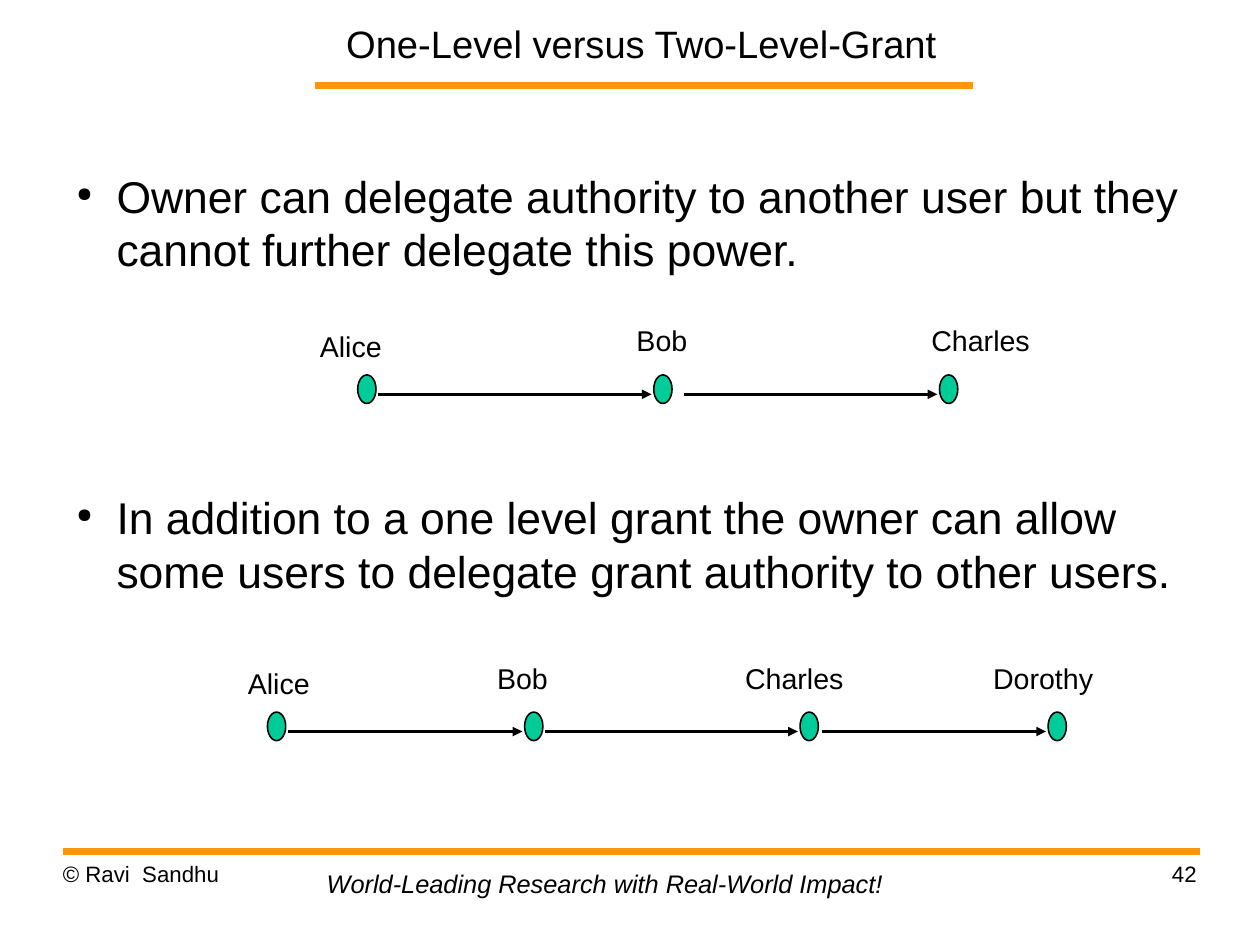
from dataclasses import dataclass

from lxml import etree
from pptx import Presentation
from pptx import util as u
from pptx.dml.color import RGBColor
from pptx.enum import shapes, text
from pptx.oxml.ns import qn


@dataclass(frozen=True)
class Theme:
    font: str = "Arial"
    ink: RGBColor = RGBColor(0, 0, 0)
    rule: RGBColor = RGBColor(0xFF, 0x95, 0x0E)
    node: RGBColor = RGBColor(0x00, 0xCC, 0x99)
    title: int = 24
    body: int = 28
    label: int = 18
    tagline: int = 16
    footer: int = 14


THEME = Theme()
LEFT, RIGHT = text.PP_ALIGN.LEFT, text.PP_ALIGN.RIGHT
NODE_WIDTH, NODE_HEIGHT = 0.16, 0.25

BULLETS = [
    "Owner can delegate authority to another user but they cannot further delegate this power.",
    "In addition to a one level grant the owner can allow some users to delegate grant authority to other users.",
]

# Each user: name, label left, label width, label drop, node left, start of the arrow leaving it
ONE_LEVEL = [
    ("Alice", 2.7, 0.92, 0.05, 3.13, 3.31),
    ("Bob", 5.47, 0.75, 0, 5.72, 5.98),
    ("Charles", 8.05, 1.22, 0, 8.22, None),
]
TWO_LEVEL = [
    ("Alice", 2.07, 0.92, 0.05, 2.34, 2.52),
    ("Bob", 4.25, 0.75, 0, 4.59, 4.77),
    ("Charles", 6.42, 1.22, 0, 7.0, 7.19),
    ("Dorothy", 8.59, 1.31, 0, 9.17, None),
]


def style(para, size, align=LEFT, italic=False):
    para.alignment = align
    font = para.font
    font.name, font.size, font.italic = THEME.font, u.Pt(size), italic
    font.color.rgb = THEME.ink


def set_margins(frame, side=0, end=0):
    frame.margin_left = frame.margin_right = u.Inches(side)
    frame.margin_top = frame.margin_bottom = u.Inches(end)
    frame.word_wrap = True


def add_title(slide, wording):
    title = slide.shapes.title
    title.left, title.top = u.Inches(2.77), u.Inches(0)
    title.width, title.height = u.Inches(5.68), u.Inches(0.75)
    frame = title.text_frame
    set_margins(frame)
    frame.vertical_anchor = text.MSO_ANCHOR.MIDDLE
    frame.text = wording
    style(frame.paragraphs[0], THEME.title, text.PP_ALIGN.CENTER)


def add_text(slide, wording, left, top, width, height, size, margins=(0, 0), **format):
    box = slide.shapes.add_textbox(*map(u.Inches, (left, top, width, height)))
    frame = box.text_frame
    set_margins(frame, *margins)
    frame.text = wording
    style(frame.paragraphs[0], size, **format)


def add_bullets(slide, items):
    box = slide.shapes.add_textbox(*map(u.Inches, (0.55, 1.48, 10.13, 5.91)))
    frame = box.text_frame
    set_margins(frame)
    frame.text = "\n".join(items)
    for index, para in enumerate(frame.paragraphs):
        if index:
            para.space_before = u.Pt(135)  # room for the chain above
        props = para._p.get_or_add_pPr()
        props.set("marL", str(u.Inches(0.47)))
        props.set("indent", str(u.Inches(-0.35)))
        etree.SubElement(props, qn("a:buSzPct"), val="45000")
        etree.SubElement(props, qn("a:buChar"), char="●")
        style(para, THEME.body)


def add_line(slide, start, end, y, color, weight, arrow=False):
    line = slide.shapes.add_connector(
        shapes.MSO_CONNECTOR.STRAIGHT, *map(u.Inches, (start, y, end, y)))
    line.line.color.rgb = color
    line.line.width = u.Pt(weight)
    if arrow:
        etree.SubElement(line.line._get_or_add_ln(), qn("a:tailEnd"), type="triangle")
    etree.SubElement(line._element.spPr, qn("a:effectLst"))


def add_node(slide, left, top):
    node = slide.shapes.add_shape(
        shapes.MSO_SHAPE.OVAL, *map(u.Inches, (left, top, NODE_WIDTH, NODE_HEIGHT)))
    node.shadow.inherit = False
    node.fill.solid()
    node.fill.fore_color.rgb = THEME.node
    node.line.color.rgb = THEME.ink
    node.line.width = u.Pt(1)


def add_chain(slide, users, top):
    for name, label_left, label_width, drop, node_left, _ in users:
        add_node(slide, node_left, top)
        add_text(slide, name, label_left, top - 0.5 + drop, label_width, 0.5,
                 THEME.label, margins=(0.1, 0.05))
    for (*_, start), (*_, next_left, _) in zip(users, users[1:]):
        add_line(slide, start, next_left - 0.02, top + 0.17, THEME.ink, 2, arrow=True)


def main():
    deck = Presentation()
    deck.slide_width, deck.slide_height = u.Cm(28), u.Cm(21)
    slide = deck.slides.add_slide(deck.slide_layouts[5])

    # Rules under the title and above the footer
    add_line(slide, 2.76, 8.51, 0.75, THEME.rule, 4.31)
    add_line(slide, 0.55, 10.5, 7.45, THEME.rule, 4.31)

    # Title and points
    add_title(slide, "One-Level versus Two-Level-Grant")
    add_bullets(slide, BULLETS)

    # Footer
    add_text(slide, "© Ravi  Sandhu", 0.55, 7.53, 2.57, 0.57, THEME.footer)
    add_text(slide, "42", 7.9, 7.53, 2.57, 0.57, THEME.footer, align=RIGHT)
    add_text(slide, "World-Leading Research with Real-World Impact!", 2.76, 7.55, 5.18, 0.37,
             THEME.tagline, margins=(0.1, 0.05), italic=True)

    # Delegation chains
    add_chain(slide, ONE_LEVEL, 3.28)
    add_chain(slide, TWO_LEVEL, 6.23)

    deck.save("out.pptx")


if __name__ == "__main__":
    main()
